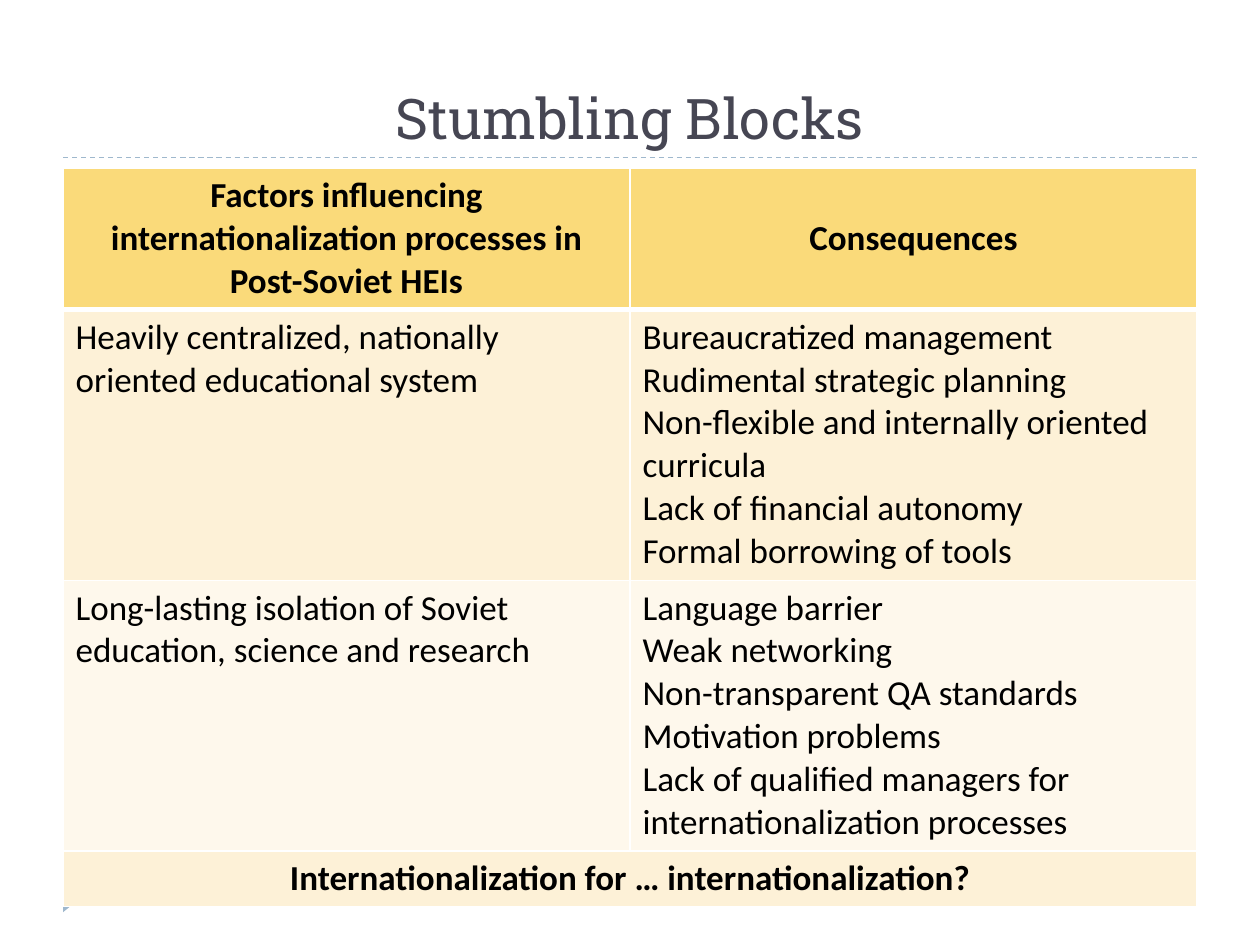
import pptx
import pptx.util
import pptx.dml.color
import pptx.enum.dml
import pptx.enum.shapes
import pptx.enum.text
import pptx.oxml
import pptx.oxml.ns
from lxml import etree

Cm, Pt = pptx.util.Cm, pptx.util.Pt
ALIGN = pptx.enum.text.PP_ALIGN
ANCHOR = pptx.enum.text.MSO_ANCHOR
qn = pptx.oxml.ns.qn

TITLE = "Stumbling Blocks"
ACCENT, INK, BLACK, WHITE = "9FB8CD", "464653", "000000", "FFFFFF"
LEFT, WIDTH = 1.27, 22.86
TABLE_TOP = 3.39

# One entry per row: height in cm, fill, is heading, paragraphs of each cell
ROWS = [
    (2.85, "FADA7A", True, [
        ["Factors influencing internationalization processes in Post-Soviet HEIs"],
        ["Consequences"],
    ]),
    (5.46, "FDF1D7", False, [
        ["Heavily centralized, nationally oriented educational system"],
        ["Bureaucratized management",
         "Rudimental strategic planning",
         "Non-flexible and internally oriented curricula",
         "Lack of financial autonomy",
         "Formal borrowing of tools"],
    ]),
    (5.46, "FEF8EC", False, [
        ["Long-lasting isolation of Soviet education, science and research"],
        ["Language barrier",
         "Weak networking",
         "Non-transparent QA standards",
         "Motivation problems",
         "Lack of qualified managers for internationalization processes"],
    ]),
    (1.11, "FDF1D7", True, [
        ["Internationalization for … internationalization?"],
    ]),
]


def rgb(color):
    return pptx.dml.color.RGBColor.from_string(color)


def write(tf, lines, font, size, color, bold=False, align=ALIGN.LEFT):
    for i, line in enumerate(lines):
        p = tf.paragraphs[0] if i == 0 else tf.add_paragraph()
        p.text = line
        p.alignment = align
        p.font.name = font
        p.font.size = Pt(size)
        p.font.bold = bold
        p.font.color.rgb = rgb(color)


def set_borders(cell, widths):
    """Draw white cell borders; widths maps a side (L, R, T, B) to points."""
    tcPr = cell._tc.get_or_add_tcPr()
    for i, (side, width) in enumerate(widths.items()):
        ln = etree.Element(qn(f"a:ln{side}"), w=str(Pt(width)))
        fill = etree.SubElement(ln, qn("a:solidFill"))
        etree.SubElement(fill, qn("a:srgbClr"), val=WHITE)
        tcPr.insert(i, ln)


prs = pptx.Presentation()
prs.slide_width, prs.slide_height = Cm(25.4), Cm(19.05)
s = prs.slides.add_slide(prs.slide_layouts[6])

rule = s.shapes.add_connector(pptx.enum.shapes.MSO_CONNECTOR.STRAIGHT,
                              Cm(LEFT), Cm(3.17), Cm(LEFT + WIDTH), Cm(3.17))
rule.line.color.rgb = rgb(ACCENT)
rule.line.width = Pt(0.75)
rule.line.dash_style = pptx.enum.dml.MSO_LINE.DASH
etree.SubElement(rule._element.spPr, qn("a:effectLst"))

marker = s.shapes.add_shape(pptx.enum.shapes.MSO_SHAPE.ISOSCELES_TRIANGLE,
                            Cm(1.17), Cm(17.96), Cm(0.53), Cm(0.33))
marker.rotation = 90
marker.shadow.inherit = False
marker.fill.solid()
marker.fill.fore_color.rgb = rgb(ACCENT)
marker.line.fill.background()

title = s.shapes.add_textbox(Cm(LEFT), Cm(0.43), Cm(WIDTH), Cm(2.74))
title.text_frame.word_wrap = True
title.text_frame.vertical_anchor = ANCHOR.BOTTOM
write(title.text_frame, [TITLE], "Roboto Slab", 32, INK, align=ALIGN.CENTER)

height = sum(row[0] for row in ROWS)
table = s.shapes.add_table(len(ROWS), 2, Cm(LEFT), Cm(TABLE_TOP),
                           Cm(WIDTH), Cm(height)).table
for r, (row_height, fill, heading, texts) in enumerate(ROWS):
    table.rows[r].height = Cm(row_height)
    if len(texts) == 1:
        table.cell(r, 0).merge(table.cell(r, 1))
    for c, cell in enumerate(table.rows[r].cells):
        cell.fill.solid()
        cell.fill.fore_color.rgb = rgb(fill)
        set_borders(cell, {"L": 1, "R": 1, "T": 3 if r == 1 else 1,
                           "B": 3 if r == 0 else 1})
        if c < len(texts):
            cell.vertical_anchor = ANCHOR.MIDDLE if heading else ANCHOR.TOP
            write(cell.text_frame, texts[c], "Calibri", 20, BLACK, heading,
                  ALIGN.CENTER if heading else ALIGN.LEFT)

prs.save("out.pptx")
